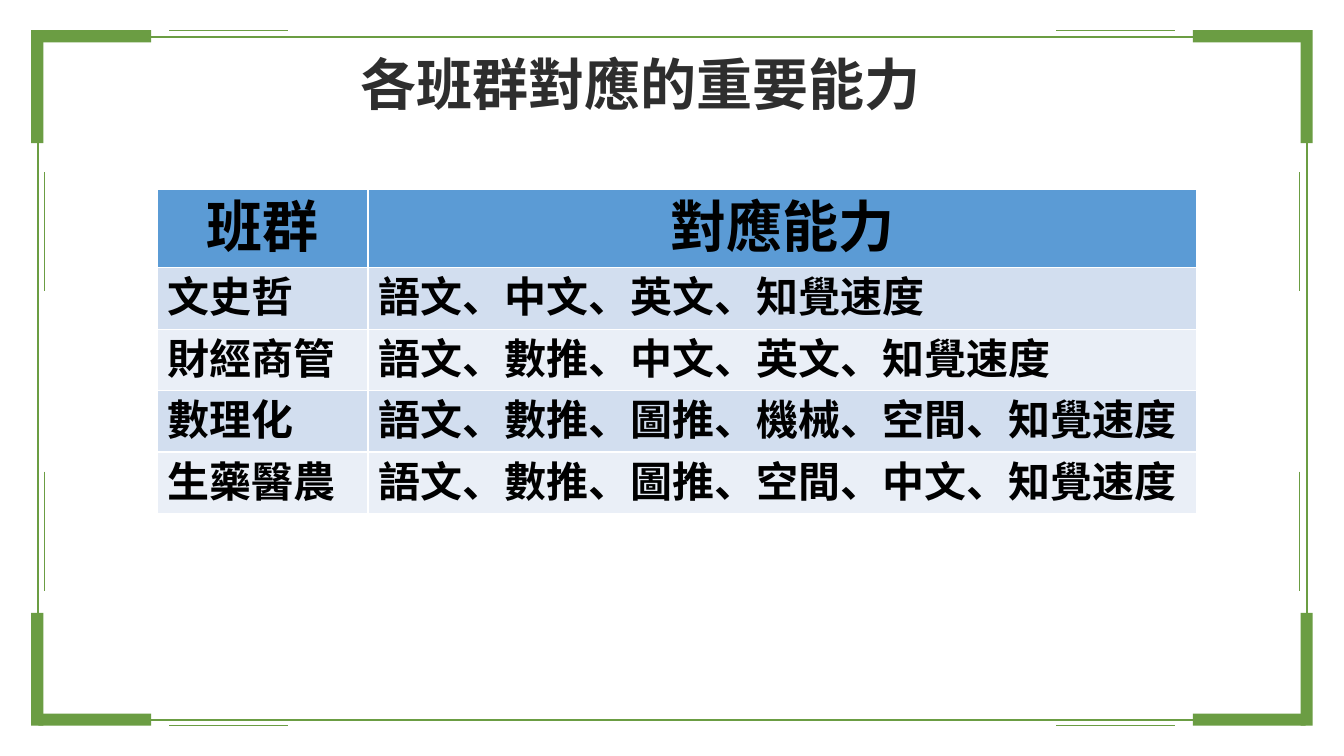
from lxml import etree
from pptx import Presentation
from pptx.dml.color import RGBColor
from pptx.enum.shapes import MSO_CONNECTOR, MSO_SHAPE
from pptx.enum.text import MSO_ANCHOR, PP_ALIGN
from pptx.oxml.ns import qn
from pptx.util import Inches, Pt

RECT = MSO_SHAPE.RECTANGLE
LINE = MSO_CONNECTOR.STRAIGHT
MIDDLE = MSO_ANCHOR.MIDDLE
LEFT, CENTER = PP_ALIGN.LEFT, PP_ALIGN.CENTER

COLORS = {"green": "6B9D43", "title": "2E2E2E", "text": "000000",
          "head": "5B9BD5", "odd": "D2DEEF", "even": "EAEFF7"}
WIDE, HIGH = 13.33, 7.5
ROWS = [
    ("班群", "對應能力"),
    ("文史哲", "語文、中文、英文、知覺速度"),
    ("財經商管", "語文、數推、中文、英文、知覺速度"),
    ("數理化", "語文、數推、圖推、機械、空間、知覺速度"),
    ("生藥醫農", "語文、數推、圖推、空間、中文、知覺速度"),
]


def color(name):
    return RGBColor.from_string(COLORS[name])


def style(para, face, size, tint):
    """Format the runs, with the same face for Latin and East Asian text."""
    for run in para.runs:
        font = run.font
        font.name, font.size, font.bold = face, Pt(size), True
        font.color.rgb = color(tint)
        east = etree.SubElement(run._r.get_or_add_rPr(), qn("a:ea"))
        east.set("typeface", face)


def add_bar(slide, x, y, w, h):
    bar = slide.shapes.add_shape(RECT, *map(Inches, (x, y, w, h)))
    bar.shadow.inherit = False
    bar.fill.solid()
    bar.fill.fore_color.rgb = color("green")
    bar.line.fill.background()


def add_line(slide, x1, y1, x2, y2):
    line = slide.shapes.add_connector(LINE, *map(Inches, (x1, y1, x2, y2)))
    line.line.color.rgb = color("green")
    line.line.width = Pt(0.5)
    etree.SubElement(line._element.spPr, qn("a:effectLst"))


def add_corner(slide, right, low):
    """Draw one bracket and its two thin lines, mirrored as asked."""
    def flip_x(x, w=0):
        return WIDE - x - w if right else x

    def flip_y(y, h=0):
        return HIGH - y - h if low else y

    long, thick = 1.12, 0.12
    add_bar(slide, flip_x(0.38, long), flip_y(0.3, thick), long, thick)
    add_bar(slide, flip_x(0.31, thick), flip_y(0.3, long), thick, long)
    add_line(slide, flip_x(1.68), flip_y(0.3), flip_x(2.86), flip_y(0.3))
    top = 4.68 if low else 1.71
    add_line(slide, flip_x(0.44), top, flip_x(0.44), top + 1.18)


def add_frame(slide, x, y, w, h):
    frame = slide.shapes.add_shape(RECT, *map(Inches, (x, y, w, h)))
    frame.shadow.inherit = False
    frame.fill.background()
    frame.line.color.rgb = color("green")
    frame.line.width = Pt(1.5)
    for right in (False, True):
        for low in (False, True):
            add_corner(slide, right, low)


def add_title(slide, x, y, w, h):
    title = slide.shapes.title
    title.left, title.top, title.width, title.height = map(Inches, (x, y, w, h))
    frame = title.text_frame
    frame.text = "各班群對應的重要能力"
    frame.vertical_anchor = MIDDLE
    para = frame.paragraphs[0]
    para.alignment = LEFT
    style(para, "Noto Sans CJK SC", 40, "title")


def add_grid(slide, x, y, w, h):
    first = 2.09
    box = map(Inches, (x, y, w, h))
    table = slide.shapes.add_table(len(ROWS), 2, *box).table
    table.columns[0].width = Inches(first)
    table.columns[1].width = Inches(w - first)
    for i, row in enumerate(ROWS):
        fill = "head" if i == 0 else "odd" if i % 2 else "even"
        for j, text in enumerate(row):
            cell = table.cell(i, j)
            cell.fill.solid()
            cell.fill.fore_color.rgb = color(fill)
            cell.text_frame.text = text
            para = cell.text_frame.paragraphs[0]
            para.alignment = LEFT if i else CENTER
            style(para, "Calibri", 30 if i else 40, "text")


def main():
    deck = Presentation()
    deck.slide_width, deck.slide_height = Inches(WIDE), Inches(HIGH)
    slide = deck.slides.add_slide(deck.slide_layouts[5])
    add_frame(slide, 0.38, 0.37, 12.58, 6.77)
    add_title(slide, 3.48, 0.44, 9.4, 0.77)
    add_grid(slide, 1.56, 1.88, 10.31, 2.05)
    deck.save("out.pptx")


if __name__ == "__main__":
    main()
